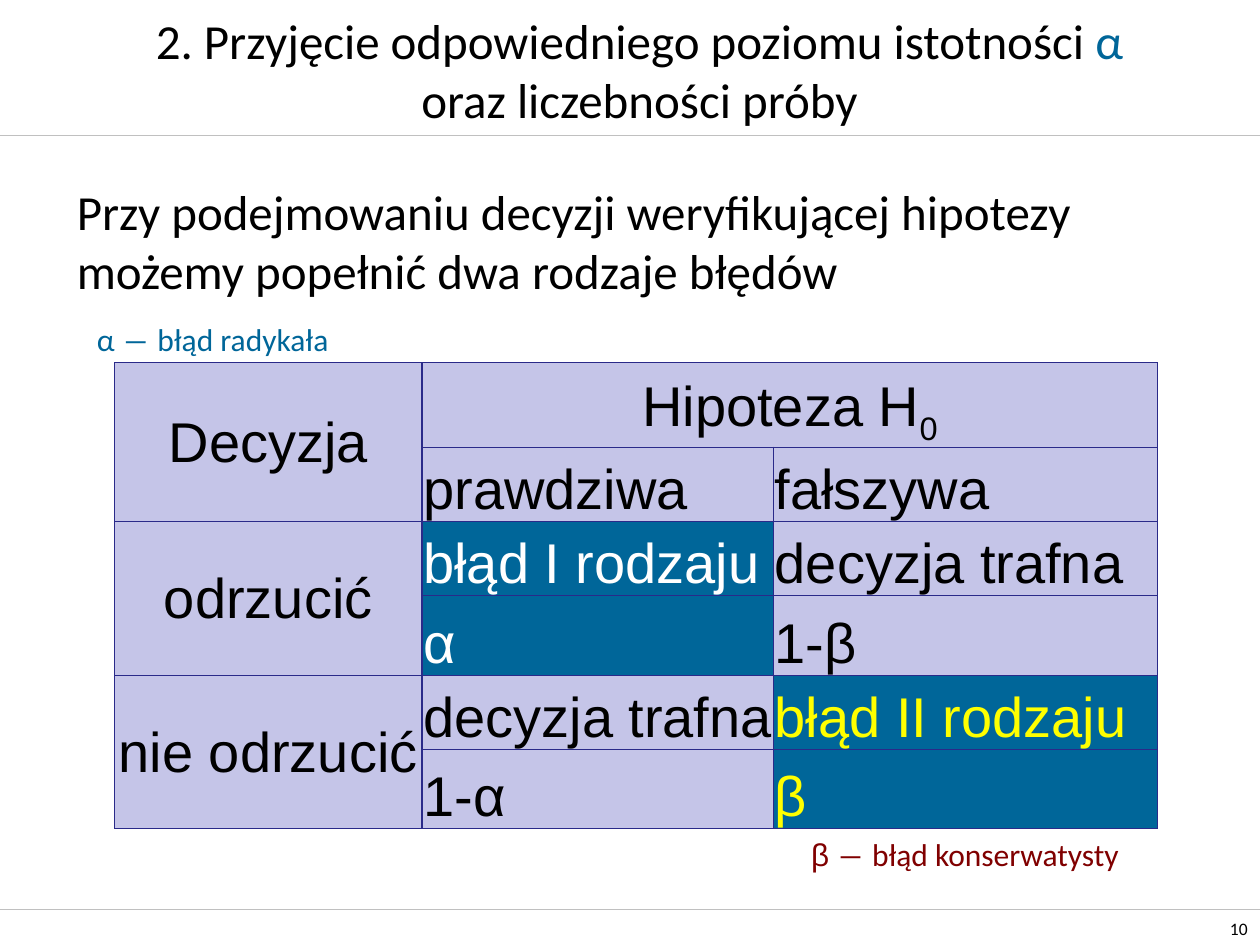
import pptx
import pptx.util
import pptx.dml.color
import pptx.enum.shapes
import pptx.enum.text
import pptx.oxml.ns
from lxml import etree

Inches, Pt = pptx.util.Inches, pptx.util.Pt
RGBColor = pptx.dml.color.RGBColor
ALIGN = pptx.enum.text.PP_ALIGN
ANCHOR = pptx.enum.text.MSO_ANCHOR
qn = pptx.oxml.ns.qn

BLACK = RGBColor(0, 0, 0)
WHITE = RGBColor(255, 255, 255)
YELLOW = RGBColor(255, 255, 0)
BLUE = RGBColor(0x00, 0x66, 0x99)
MAROON = RGBColor(0x80, 0, 0)
LAVENDER = RGBColor(0xC5, 0xC5, 0xE8)
NAVY = RGBColor(0x2A, 0x2A, 0x89)
SILVER = RGBColor(0xC0, 0xC0, 0xC0)

# Content: spans are (text, colour) or (text, colour, font name)
TITLE = [("2. Przyjęcie odpowiedniego poziomu istotności ", BLACK), ("α", BLUE),
         (" oraz liczebności próby", BLACK)]
BODY = [("Przy podejmowaniu decyzji weryfikującej hipotezy możemy popełnić "
         "dwa rodzaje błędów", BLACK)]
LABELS = [  # place, spans, size, alignment, anchor
    ((0.67, 2.49, 4.57, 0.4), [("α ― błąd radykała", BLUE)], 18, ALIGN.LEFT, ANCHOR.TOP),
    ((6.34, 6.58, 2.83, 0.4),
     [("β", MAROON, "Arial"), (" ― błąd konserwatysty", MAROON)], 18, ALIGN.LEFT, ANCHOR.TOP),
    ((9.49, 7.22, 0.51, 0.28), [("10", BLACK)], 10, ALIGN.RIGHT, ANCHOR.BOTTOM),
]
RULES = [1.07, 7.22]

# Decision table
COLUMNS = [2.44, 2.79, 3.05]
ROWS = [0.67, 0.59, 0.59, 0.63, 0.59, 0.63]
CELLS = [
    ["Decyzja", "Hipoteza H", None],
    [None, "prawdziwa", "fałszywa"],
    ["odrzucić", "błąd I rodzaju", "decyzja trafna"],
    [None, "α", "1-β"],
    ["nie odrzucić", "decyzja trafna", "błąd II rodzaju"],
    [None, "1-α", "β"],
]
MERGES = [((0, 0), (1, 0)), ((0, 1), (0, 2)), ((2, 0), (3, 0)), ((4, 0), (5, 0))]
ERRORS = {(2, 1): WHITE, (3, 1): WHITE, (4, 2): YELLOW, (5, 2): YELLOW}


def apply(target, **values):
    for name, value in values.items():
        setattr(target, name, value)


def add_spans(para, spans, size, font="Calibri"):
    for text, colour, *other in spans:
        span = para.add_run()
        span.text = text
        apply(span.font, size=Pt(size), name=other[0] if other else font)
        span.font.color.rgb = colour


def fill_box(box, place, spans, size, align, anchor):
    apply(box, **dict(zip(("left", "top", "width", "height"), map(Inches, place))))
    apply(box.text_frame, word_wrap=True, vertical_anchor=anchor,
          auto_size=pptx.enum.text.MSO_AUTO_SIZE.NONE)
    para = box.text_frame.paragraphs[0]
    apply(para, alignment=align, space_before=Pt(0))
    add_spans(para, spans, size)


def add_borders(cell):
    properties = cell._tc.get_or_add_tcPr()
    for side in ("a:lnL", "a:lnR", "a:lnT", "a:lnB"):
        border = etree.SubElement(properties, qn(side), w=str(Pt(0.75)))
        solid = etree.SubElement(border, qn("a:solidFill"))
        etree.SubElement(solid, qn("a:srgbClr"), val=str(NAVY))


deck = pptx.Presentation()
apply(deck, slide_width=Inches(10), slide_height=Inches(7.5))
page = deck.slides.add_slide(deck.slide_layouts[1])
title, body = page.placeholders

# Header and footer rules
for y in RULES:
    rule = page.shapes.add_connector(pptx.enum.shapes.MSO_CONNECTOR.STRAIGHT,
                                     0, Inches(y), Inches(10), Inches(y))
    rule.line.color.rgb = SILVER
    rule.line.width = Pt(0.25)
    etree.SubElement(rule._element.spPr, qn("a:effectLst"))

# Title and statement
fill_box(title, (0.98, 0, 8.19, 1.1), TITLE, 28, ALIGN.CENTER, ANCHOR.MIDDLE)
fill_box(body, (0.51, 1.39, 8.69, 5.28), BODY, 28, ALIGN.LEFT, ANCHOR.TOP)
bullet = body.text_frame.paragraphs[0]._p.get_or_add_pPr()
bullet.set("marL", "0")
bullet.set("indent", "0")
etree.SubElement(bullet, qn("a:buNone"))

# Table of decisions and errors
frame = page.shapes.add_table(len(ROWS), len(COLUMNS), Inches(0.91), Inches(2.88),
                              Inches(sum(COLUMNS)), Inches(sum(ROWS)))
table = frame.table
apply(table, first_row=False, horz_banding=False)
for column, width in zip(table.columns, COLUMNS):
    column.width = Inches(width)
for row, height in zip(table.rows, ROWS):
    row.height = Inches(height)
for first, last in MERGES:
    table.cell(*first).merge(table.cell(*last))

for r, texts in enumerate(CELLS):
    for c, text in enumerate(texts):
        cell = table.cell(r, c)
        heading = c == 0 or r == 0
        apply(cell, margin_left=Inches(0.01), margin_right=Inches(0.01),
              margin_top=Inches(0.01), margin_bottom=0,
              vertical_anchor=ANCHOR.MIDDLE if c == 0 else ANCHOR.BOTTOM)
        add_borders(cell)
        cell.fill.solid()
        cell.fill.fore_color.rgb = BLUE if (r, c) in ERRORS else LAVENDER
        if text:
            para = cell.text_frame.paragraphs[0]
            para.alignment = ALIGN.CENTER if heading else ALIGN.LEFT
            add_spans(para, [(text, ERRORS.get((r, c), BLACK))], 32, "Arial")

# Subscript of the hypothesis
para = table.cell(0, 1).text_frame.paragraphs[0]
add_spans(para, [("0", BLACK)], 32, "Arial")
para.runs[-1].font._element.set("baseline", "-25000")

# Error names and page number
for place, *details in LABELS:
    fill_box(page.shapes.add_textbox(0, 0, 0, 0), place, *details)

deck.save("out.pptx")
